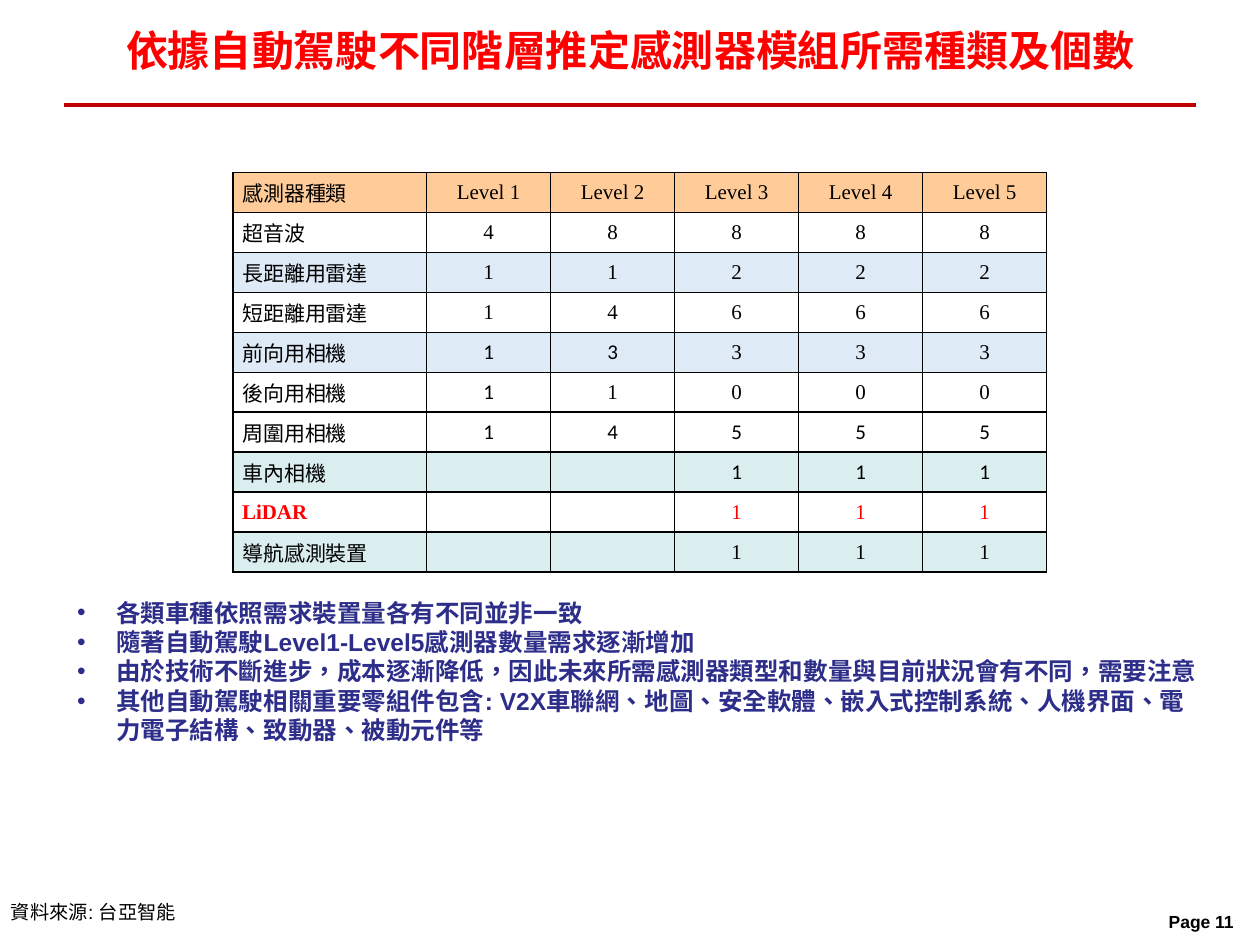
from dataclasses import dataclass
from typing import Optional

from lxml.etree import SubElement
from pptx import Presentation
from pptx.dml.color import RGBColor
from pptx.enum.shapes import MSO_CONNECTOR
from pptx.enum.text import MSO_ANCHOR, MSO_AUTO_SIZE, PP_ALIGN
from pptx.oxml.ns import qn
from pptx.util import Cm, Pt

SERIF, SANS, CALIBRI = "Times New Roman", "Arial", "Calibri"
BLACK, RED, DARK_RED, NAVY = "000000", "FF0000", "C00000", "2D2D8A"
ORANGE, PALE_BLUE, PALE_TEAL, WHITE = "FFCC99", "DEEAF6", "DAEDEF", "FFFFFF"

TITLE = "依據自動駕駛不同階層推定感測器模組所需種類及個數"
NOTES = [
    "各類車種依照需求裝置量各有不同並非一致",
    "隨著自動駕駛Level1-Level5感測器數量需求逐漸增加",
    "由於技術不斷進步，成本逐漸降低，因此未來所需感測器類型和數量與目前狀況會有不同，需要注意",
    "其他自動駕駛相關重要零組件包含: V2X車聯網、地圖、安全軟體、嵌入式控制系統、"
    "人機界面、電力電子結構、致動器、被動元件等",
]


@dataclass(frozen=True)
class Box:
    left: float
    top: float
    width: float
    height: float

    def lengths(self) -> list:
        return [Cm(v) for v in (self.left, self.top, self.width, self.height)]


@dataclass(frozen=True)
class TextStyle:
    size: float
    name: str
    color: str = BLACK
    bold: bool = False


@dataclass(frozen=True)
class SensorRow:
    sensor: str
    counts: tuple
    fill: Optional[str] = None
    calibri_columns: tuple = ()
    color: str = BLACK
    bold_label: bool = False


ALL_COLUMNS = tuple(range(6))
ROWS = [
    SensorRow("感測器種類", tuple(f"Level {n}" for n in range(1, 6)), ORANGE),
    SensorRow("超音波", (4, 8, 8, 8, 8)),
    SensorRow("長距離用雷達", (1, 1, 2, 2, 2), PALE_BLUE),
    SensorRow("短距離用雷達", (1, 4, 6, 6, 6)),
    SensorRow("前向用相機", (1, 3, 3, 3, 3), PALE_BLUE, (1, 2)),
    SensorRow("後向用相機", (1, 1, 0, 0, 0), None, (1,)),
    SensorRow("周圍用相機", (1, 4, 5, 5, 5), None, ALL_COLUMNS),
    SensorRow("車內相機", ("", "", 1, 1, 1), PALE_TEAL, ALL_COLUMNS),
    SensorRow("LiDAR", ("", "", 1, 1, 1), WHITE, (), RED, True),
    SensorRow("導航感測裝置", ("", "", 1, 1, 1), PALE_TEAL),
]


def rgb(color: str) -> RGBColor:
    return RGBColor.from_string(color)


def write(paragraph, text: str, style: TextStyle, align=PP_ALIGN.LEFT) -> None:
    paragraph.alignment = align
    run = paragraph.add_run()
    run.text = text
    formats = {"size": Pt(style.size), "name": style.name, "bold": style.bold}
    for attribute, value in formats.items():
        setattr(run.font, attribute, value)
    run.font.color.rgb = rgb(style.color)
    run._r.get_or_add_rPr().set("lang", "zh-TW")


def place(shape, box: Box) -> None:
    for attribute, value in zip(("left", "top", "width", "height"), box.lengths()):
        setattr(shape, attribute, value)


def set_frame(frame, anchor) -> None:
    formats = {"word_wrap": True, "auto_size": MSO_AUTO_SIZE.NONE,
               "vertical_anchor": anchor}
    for attribute, value in formats.items():
        setattr(frame, attribute, value)


def add_label(slide, box: Box, text: str, style: TextStyle, align, anchor) -> None:
    frame = slide.shapes.add_textbox(*box.lengths()).text_frame
    set_frame(frame, anchor)
    write(frame.paragraphs[0], text, style, align)


def add_title(slide) -> None:
    title = slide.shapes.title
    place(title, Box(1.3, 0.13, 22.8, 1.75))
    set_frame(title.text_frame, MSO_ANCHOR.MIDDLE)
    write(title.text_frame.paragraphs[0], TITLE,
          TextStyle(24, SERIF, RED, True), PP_ALIGN.CENTER)


def add_title_rule(slide) -> None:
    rule = slide.shapes.add_connector(
        MSO_CONNECTOR.STRAIGHT, Cm(1.3), Cm(2.12), Cm(24.1), Cm(2.12))
    rule.line.color.rgb = rgb(DARK_RED)
    rule.line.width = Pt(2.5)
    SubElement(rule._element.spPr, qn("a:effectLst"))


def add_notes(slide) -> None:
    body = slide.placeholders[1]
    place(body, Box(1.3, 11.92, 23.2, 3.25))
    frame = body.text_frame
    set_frame(frame, MSO_ANCHOR.TOP)
    for index, note in enumerate(NOTES):
        paragraph = frame.add_paragraph() if index else frame.paragraphs[0]
        properties = paragraph._p.get_or_add_pPr()
        properties.set("marL", str(Cm(0.79)))
        properties.set("indent", str(-Cm(0.79)))
        SubElement(properties, qn("a:buChar"), char="•")
        paragraph.space_before = Pt(0)
        write(paragraph, note, TextStyle(14, SANS, NAVY, True))


def add_borders(cell) -> None:
    """Black 1 pt lines, put before the fill as the schema asks."""
    properties = cell._tc.get_or_add_tcPr()
    for position, side in enumerate(("lnL", "lnR", "lnT", "lnB")):
        border = SubElement(properties, qn(f"a:{side}"), w=str(Pt(1)))
        fill = SubElement(border, qn("a:solidFill"))
        SubElement(fill, qn("a:srgbClr"), val=BLACK)
        properties.insert(position, border)


def fill_cell(cell, row: SensorRow, column: int, text: str) -> None:
    formats = {"margin_left": Cm(0.18), "margin_right": Cm(0.18), "margin_top": 0,
               "margin_bottom": 0, "vertical_anchor": MSO_ANCHOR.MIDDLE}
    for attribute, value in formats.items():
        setattr(cell, attribute, value)
    if row.fill:
        cell.fill.solid()
        cell.fill.fore_color.rgb = rgb(row.fill)
    else:
        cell.fill.background()
    add_borders(cell)
    if text:
        font = CALIBRI if column in row.calibri_columns else SERIF
        style = TextStyle(12, font, row.color, row.bold_label and column == 0)
        write(cell.text_frame.paragraphs[0], text, style,
              PP_ALIGN.CENTER if column else PP_ALIGN.LEFT)


def add_sensor_table(slide) -> None:
    box = Box(4.7, 3.48, 16.4, 8.05)
    table = slide.shapes.add_table(len(ROWS), 6, *box.lengths()).table
    for column, width in zip(table.columns, [3.9] + [2.5] * 5):
        column.width = Cm(width)
    for row_index, row in enumerate(ROWS):
        table.rows[row_index].height = Cm(box.height / len(ROWS))
        for column, value in enumerate((row.sensor, *row.counts)):
            fill_cell(table.cell(row_index, column), row, column, str(value))


def main() -> None:
    presentation = Presentation()
    presentation.slide_width, presentation.slide_height = Cm(25.4), Cm(19.05)
    slide = presentation.slides.add_slide(presentation.slide_layouts[1])
    add_title(slide)
    add_title_rule(slide)
    add_sensor_table(slide)
    add_notes(slide)
    add_label(slide, Box(-0.03, 18.03, 3.86, 0.74), "資料來源: 台亞智能",
              TextStyle(11, SANS), PP_ALIGN.LEFT, MSO_ANCHOR.TOP)
    add_label(slide, Box(18.92, 18.24, 6.2, 0.69), "Page 11",
              TextStyle(10, SANS, BLACK, True), PP_ALIGN.RIGHT, MSO_ANCHOR.MIDDLE)
    presentation.save("out.pptx")


if __name__ == "__main__":
    main()
